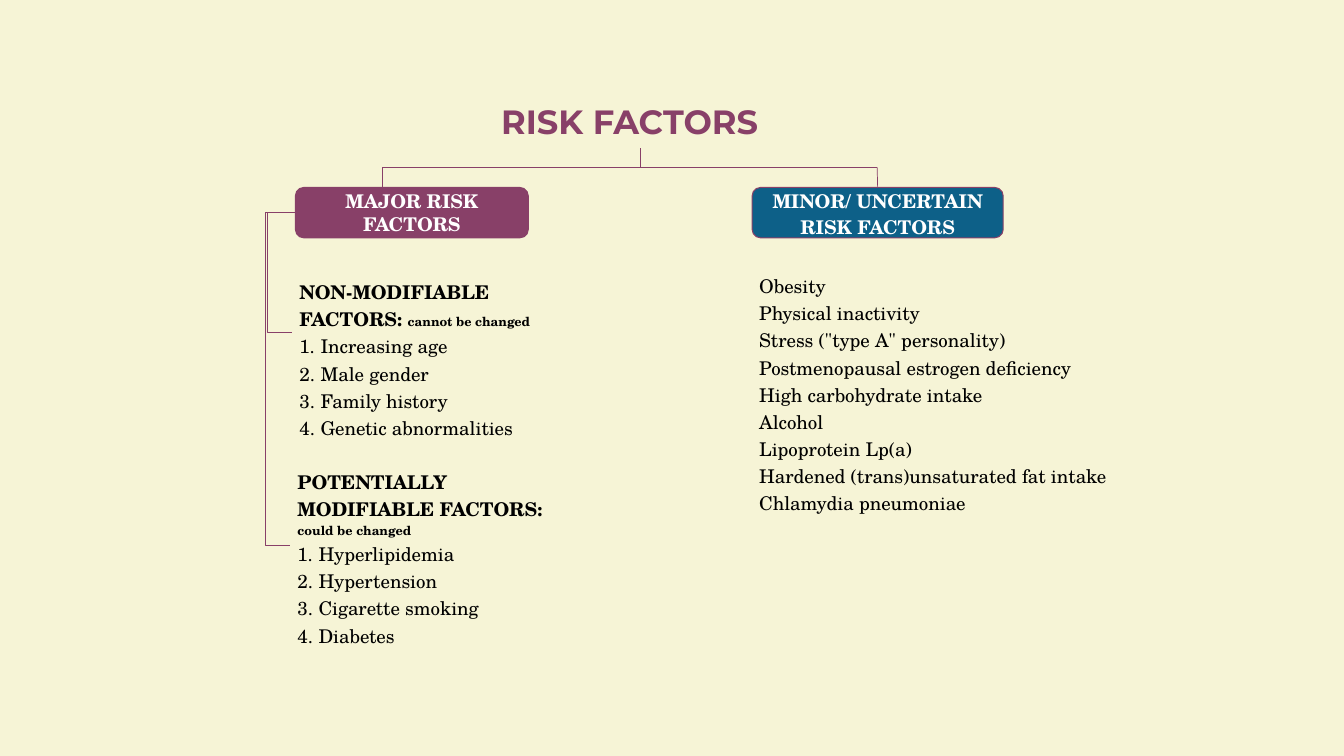
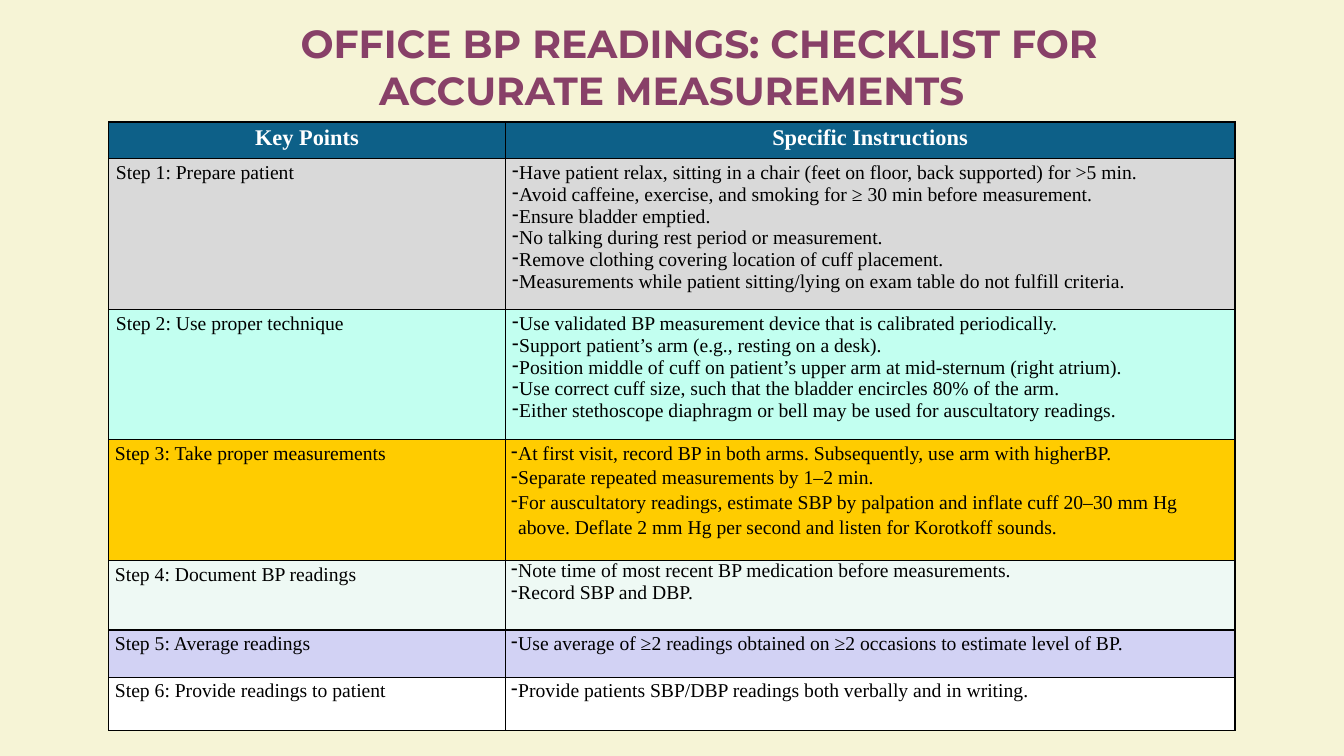
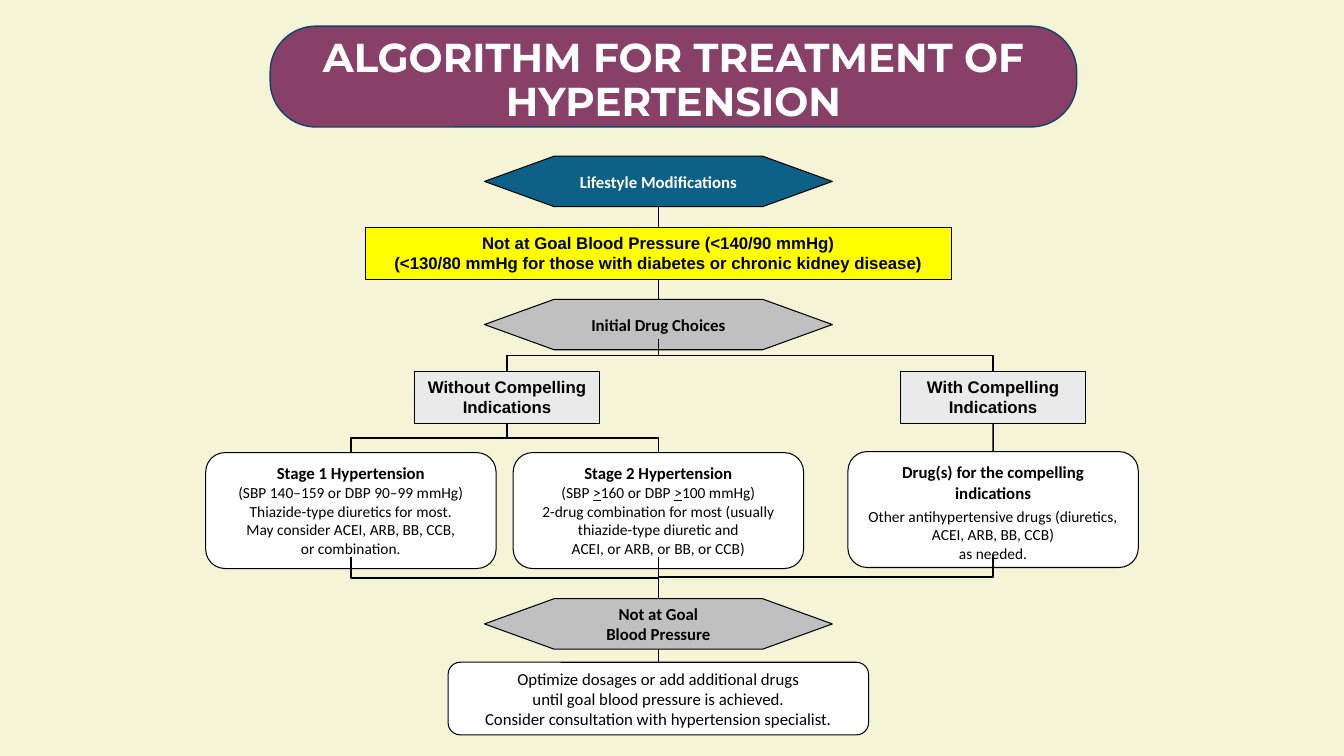
from dataclasses import dataclass, field, replace
from typing import Optional

from lxml import etree
from pptx import Presentation
from pptx.dml import color
from pptx.enum import shapes, text
from pptx.oxml import ns
from pptx.util import Inches, Pt

Insets = tuple[float, float, float, float]
Rect = tuple[float, float, float, float]
MSO = shapes.MSO_SHAPE
CENTER = text.PP_ALIGN.CENTER
LEFT = text.PP_ALIGN.LEFT
TOP = text.MSO_ANCHOR.TOP
MIDDLE = text.MSO_ANCHOR.MIDDLE


@dataclass(frozen=True)
class Style:
    font: str
    size: float
    color: str = "000000"
    bold: bool = False
    underline: bool = False


@dataclass(frozen=True)
class Theme:
    paper: str = "F6F4D6"
    plum: str = "884068"
    blue: str = "0D6088"
    navy: str = "0A4765"
    black: str = "000000"
    white: str = "FFFFFF"
    yellow: str = "FFFF00"
    gray: str = "C0C0C0"
    pale: str = "EAEAEA"
    title: Style = Style("Montserrat", 28, "884068", True)
    schola: Style = Style("TeX Gyre Schola", 13.5)
    table: Style = Style("Times New Roman", 14)
    table_head: Style = Style("Times New Roman", 16, "FFFFFF", True)
    arial: Style = Style("Arial", 12, bold=True)
    node: Style = Style("Calibri", 12, bold=True)
    detail: Style = Style("Calibri", 11)


T = Theme()


@dataclass(frozen=True)
class Run:
    text: str
    style: Style


@dataclass(frozen=True)
class Para:
    runs: list[Run]
    align: int = CENTER
    spacing: Optional[float] = None
    before: float = 0
    indent: float = 0
    margin: float = 0
    bullet: str = ""


@dataclass(frozen=True)
class Node:
    kind: int
    at: Rect
    fill: str
    paras: list[Para] = field(default_factory=list)
    line: str = T.black
    width: float = 0.75
    adj: Optional[float] = None
    anchor: int = TOP
    wrap: bool = True
    ins: Insets = (0.1, 0.05, 0.1, 0.05)


@dataclass(frozen=True)
class Step:
    name: str
    points: list[str]
    fill: str
    height: float
    ins: Insets = (0.06, 0, 0.06, 0)
    spacing: float = 1.15
    point_spacing: float = 1.15


def rgb(value: str) -> color.RGBColor:
    return color.RGBColor.from_string(value)


def para(content: str, style: Style, **options) -> Para:
    return Para([Run(content, style)], **options)


def write(tf, paras: list[Para]) -> None:
    for i, spec in enumerate(paras):
        p = tf.paragraphs[0] if i == 0 else tf.add_paragraph()
        p.alignment = spec.align
        if spec.indent or spec.margin:
            pPr = p._p.get_or_add_pPr()
            pPr.set("marL", str(Inches(spec.margin)))
            pPr.set("indent", str(Inches(spec.indent)))
        if spec.bullet == "number":
            etree.SubElement(pPr, ns.qn("a:buAutoNum"), type="arabicPeriod")
        elif spec.bullet:
            etree.SubElement(pPr, ns.qn("a:buChar"), char=spec.bullet)
        if spec.spacing:
            p.line_spacing = spec.spacing
        if spec.before:
            p.space_before = Pt(spec.before)
        for run in spec.runs:
            for n, part in enumerate(run.text.split("\n")):
                if n:
                    p.add_line_break()
                if part:
                    r = p.add_run()
                    r.text = part
                    r.font.name = run.style.font
                    r.font.size = Pt(run.style.size)
                    r.font.bold = run.style.bold
                    r.font.underline = run.style.underline
                    r.font.color.rgb = rgb(run.style.color)


def frame(tf, ins: Insets, anchor: int = TOP, wrap: bool = True) -> None:
    tf.word_wrap = wrap
    tf.vertical_anchor = anchor
    tf.margin_left, tf.margin_top, tf.margin_right, tf.margin_bottom = map(Inches, ins)


def add_text(s, at: Rect, paras: list[Para], ins: Insets = (0.07, 0.07, 0.07, 0.07)) -> None:
    tf = s.shapes.add_textbox(*map(Inches, at)).text_frame
    frame(tf, ins)
    write(tf, paras)


def add_node(s, node: Node):
    sp = s.shapes.add_shape(node.kind, *map(Inches, node.at))
    sp.shadow.inherit = False
    sp.fill.solid()
    sp.fill.fore_color.rgb = rgb(node.fill)
    sp.line.color.rgb = rgb(node.line)
    sp.line.width = Pt(node.width)
    if node.adj is not None:
        sp.adjustments[0] = node.adj
    frame(sp.text_frame, node.ins, node.anchor, node.wrap)
    write(sp.text_frame, node.paras)
    return sp


def connector(s, kind: int, box: Rect, stroke: str, width: float):
    c = s.shapes.add_connector(kind, *map(Inches, box))
    c.line.color.rgb = rgb(stroke)
    c.line.width = Pt(width)
    etree.SubElement(c.element.spPr, ns.qn("a:effectLst"))
    return c


def line(s, box: Rect, stroke: str = T.black, width: float = 1, start=None, end=None) -> None:
    c = connector(s, shapes.MSO_CONNECTOR.STRAIGHT, box, stroke, width)
    if start is not None:
        c.begin_connect(start, 2)
    if end is not None:
        c.end_connect(end, 0)


def link(s, upper, lower) -> None:
    line(s, (0, 0, 1, 1), start=upper, end=lower)


def elbow_down(s, x1: float, y1: float, x2: float, y2: float) -> None:
    cx, cy = (x1 + x2) / 2, (y1 + y2) / 2
    w, h = y2 - y1, abs(x2 - x1)
    box = (cx - w / 2, cy - h / 2, cx + w / 2, cy + h / 2)
    c = connector(s, shapes.MSO_CONNECTOR.ELBOW, box, T.black, 1)
    xfrm = c.element.spPr.xfrm
    xfrm.set("rot", str((270 if x2 > x1 else 90) * 60000))
    if x2 > x1:
        xfrm.set("flipH", "1")


def bracket(s, x1: float, y1: float, x2: float, y2: float, spine: float) -> None:
    c = connector(s, shapes.MSO_CONNECTOR.ELBOW, (x2, y1, x1, y2), T.plum, 0.75)
    xfrm = c.element.spPr.xfrm
    xfrm.set("rot", str(180 * 60000))
    xfrm.set("flipV", "1")
    guides = c.element.spPr.find(".//" + ns.qn("a:avLst"))
    bend = round((x1 - spine) / (x1 - x2) * 100000)
    etree.SubElement(guides, ns.qn("a:gd"), name="adj1", fmla=f"val {bend}")


def risk_factors(s) -> None:
    body = T.schola
    bold = replace(body, bold=True)
    small = replace(bold, size=9)
    head = replace(bold, color=T.white)
    loose = dict(align=LEFT, spacing=1.2)

    add_text(s, (4.58, 1.03, 3.33, 0.43),
             [para("RISK FACTORS", replace(T.title, size=24), spacing=0.9)],
             (0.04, 0.02, 0.04, 0.02))
    heads = [
        (2.93, 2.31, T.plum, "MAJOR RISK FACTORS", None),
        (7.46, 2.49, T.blue, "MINOR/ UNCERTAIN RISK FACTORS", 1.15),
    ]
    major, minor = [
        add_node(s, Node(MSO.ROUNDED_RECTANGLE, (x, 1.86, w, 0.5), fill,
                         [para(label, head, spacing=spacing)], line=T.plum,
                         adj=0.167, anchor=MIDDLE, ins=(0.07, 0.07, 0.07, 0.07)))
        for x, w, fill, label, spacing in heads
    ]

    groups = [
        ((2.9, 2.67, 2.66, 1.75), "NON-MODIFIABLE FACTORS: ", "cannot be changed",
         ["Increasing age", "Male gender", "Family history", "Genetic abnormalities"]),
        ((2.88, 4.55, 2.67, 1.9), "POTENTIALLY MODIFIABLE FACTORS: ", "could be changed",
         ["Hyperlipidemia", "Hypertension", "Cigarette smoking", "Diabetes"]),
    ]
    for at, name, note, items in groups:
        heading = Para([Run(name, bold), Run(note, small)], **loose)
        add_text(s, at, [heading] + [
            para(item, body, margin=0.21, indent=-0.21, bullet="number", **loose)
            for item in items])

    minor_items = [
        "Obesity", "Physical inactivity", 'Stress ("type A" personality)',
        "Postmenopausal estrogen deficiency", "High carbohydrate intake", "Alcohol",
        "Lipoprotein Lp(a)", "Hardened (trans)unsaturated fat intake",
        "Chlamydia pneumoniae",
    ]
    add_text(s, (7.46, 2.61, 3.62, 2.7), [para(item, body, **loose) for item in minor_items])

    bracket(s, 2.93, 2.11, 2.9, 3.3, 2.65)
    bracket(s, 2.93, 2.11, 2.88, 5.41, 2.63)
    line(s, (3.79, 1.66, 8.7, 1.66), T.plum, 0.75)
    line(s, (8.7, 1.66, 8.7, 1.86), T.plum, 0.5, end=minor)
    line(s, (3.79, 1.66, 3.79, 1.86), T.plum, 0.5)
    line(s, (6.35, 1.47, 6.35, 1.66), T.plum, 0.5)


STEPS = [
    Step("Step 1: Prepare patient", [
        "Have patient relax, sitting in a chair (feet on floor, back supported) for >5 min.",
        "Avoid caffeine, exercise, and smoking for ≥ 30 min before measurement.",
        "Ensure bladder emptied.",
        "No talking during rest period or measurement.",
        "Remove clothing covering location of cuff placement.",
        "Measurements while patient sitting/lying on exam table do not fulfill criteria.",
    ], "D9D9D9", 1.5, (0.07, 0.04, 0.07, 0.04), 1, 1),
    Step("Step 2: Use proper technique", [
        "Use validated BP measurement device that is calibrated periodically.",
        "Support patient’s arm (e.g., resting on a desk).",
        "Position middle of cuff on patient’s upper arm at mid-sternum (right atrium).",
        "Use correct cuff size, such that the bladder encircles 80% of the arm.",
        "Either stethoscope diaphragm or bell may be used for auscultatory readings.",
    ], "C2FFF0", 1.29, (0.07, 0.04, 0.07, 0.04), 1, 1),
    Step("Step 3: Take proper measurements", [
        "At first visit, record BP in both arms. Subsequently, use arm with higherBP.",
        "Separate repeated measurements by 1–2 min.",
        "For auscultatory readings, estimate SBP by palpation and inflate cuff 20–30 mm Hg "
        "above. Deflate 2 mm Hg per second and listen for Korotkoff sounds.",
    ], "FFCC00", 1.2),
    Step("Step 4: Document BP readings", [
        "Note time of most recent BP medication before measurements.",
        "Record SBP and DBP.",
    ], "EEF9F4", 0.69, point_spacing=1),
    Step("Step 5: Average readings", [
        "Use average of ≥2 readings obtained on ≥2 occasions to estimate level of BP.",
    ], "D2D2F4", 0.47),
    Step("Step 6: Provide readings to patient", [
        "Provide patients SBP/DBP readings both verbally and in writing.",
    ], "FFFFFF", 0.53),
]


def fill_cell(cell, paras: list[Para], fill: str, ins: Insets) -> None:
    cell.margin_left, cell.margin_top, cell.margin_right, cell.margin_bottom = map(Inches, ins)
    tcPr = cell._tc.get_or_add_tcPr()
    for side in "LRTB":
        ln = etree.SubElement(tcPr, ns.qn(f"a:ln{side}"), w=str(Pt(1)))
        solid = etree.SubElement(ln, ns.qn("a:solidFill"))
        etree.SubElement(solid, ns.qn("a:srgbClr"), val=T.black)
    cell.fill.solid()
    cell.fill.fore_color.rgb = rgb(fill)
    write(cell.text_frame, paras)


def bp_checklist(s) -> None:
    widths = (3.93, 7.24)
    heights = [0.36] + [step.height for step in STEPS]
    table = s.shapes.add_table(len(heights), len(widths), Inches(1.08), Inches(1.21),
                               Inches(sum(widths)), Inches(sum(heights))).table
    table.first_row = table.horz_banding = False
    for column, w in zip(table.columns, widths):
        column.width = Inches(w)
    for row, h in zip(table.rows, heights):
        row.height = Inches(h)
    for col, label in enumerate(("Key Points", "Specific Instructions")):
        fill_cell(table.cell(0, col), [para(label, T.table_head)], T.blue,
                  (0.07, 0.04, 0.07, 0.04))
    for row, step in enumerate(STEPS, 1):
        name = para(step.name, T.table, align=LEFT, spacing=step.spacing)
        points = [para(point, T.table, align=LEFT, spacing=step.point_spacing,
                       margin=0.07, indent=-0.07, bullet="-") for point in step.points]
        for col, paras in enumerate(([name], points)):
            fill_cell(table.cell(row, col), paras, step.fill, step.ins)
    add_text(s, (1.43, 0.14, 10.46, 1.04),
             [para("OFFICE BP READINGS: CHECKLIST FOR ACCURATE MEASUREMENTS",
                   T.title, indent=0.55)], (0.1, 0.05, 0.1, 0.05))


def treatment_algorithm(s) -> None:
    mid, without_x, stage1_x, with_x = 6.53, 5.03, 3.48, 9.85
    plain = replace(T.node, bold=False)
    under = replace(T.detail, underline=True)

    def around(x: float, y: float, w: float, h: float) -> Rect:
        return x - w / 2, y, w, h

    def hexagon(y: float, fill: str, label: str, ink: str = T.black):
        return add_node(s, Node(MSO.FLOWCHART_PREPARATION, around(mid, y, 3.45, 0.5), fill,
                                [para(label, replace(T.node, color=ink))],
                                anchor=MIDDLE, wrap=False))

    def block(x: float, y: float, w: float, fill: str, label: str):
        return add_node(s, Node(MSO.RECTANGLE, around(x, y, w, 0.51), fill,
                                [para(label, T.arial)]))

    def card(x: float, y: float, paras: list[Para], w: float = 2.88, h: float = 1.15,
             anchor: int = TOP):
        return add_node(s, Node(MSO.FLOWCHART_ALTERNATE_PROCESS, around(x, y, w, h),
                                T.white, paras, anchor=anchor))

    add_node(s, Node(MSO.ROUNDED_RECTANGLE, (2.68, 0.26, 8, 1), T.plum,
                     [para("ALGORITHM FOR TREATMENT OF HYPERTENSION",
                           replace(T.title, size=28.8, color=T.white), spacing=0.9)],
                     line=T.navy, width=1, adj=0.454, anchor=MIDDLE,
                     ins=(0.1, 0.1, 0.1, 0)))

    lifestyle = hexagon(1.55, T.blue, "Lifestyle Modifications", T.white)
    goal = block(mid, 2.26, 5.81, T.yellow,
                 "Not at Goal Blood Pressure (<140/90 mmHg)\n"
                 "(<130/80 mmHg for those with diabetes or chronic kidney disease)")
    choices = hexagon(2.97, T.gray, "Initial Drug Choices")
    block(without_x, 3.69, 1.83, T.pale, "Without Compelling\nIndications")
    compelling = block(with_x, 3.69, 1.83, T.pale, "With Compelling\nIndications")
    card(stage1_x, 4.49, [Para([
        Run("Stage 1 Hypertension\n", T.node),
        Run("(SBP 140–159 or DBP 90–99 mmHg)\nThiazide-type diuretics for most.\n"
            "May consider ACEI, ARB, BB, CCB,\nor combination.", T.detail)])])
    card(mid, 4.49, [Para([
        Run("Stage 2 Hypertension\n", T.node), Run("(SBP ", T.detail), Run(">", under),
        Run("160 or DBP ", T.detail), Run(">", under),
        Run("100 mmHg)\n2-drug combination for most (usually thiazide-type diuretic and\n"
            "ACEI, or ARB, or BB, or CCB)", T.detail)])])
    drugs = card(with_x, 4.48, [
        para("Drug(s) for the compelling indications", T.node),
        para("Other antihypertensive drugs (diuretics, ACEI, ARB, BB, CCB)\nas needed.",
             T.detail, before=3)])
    not_at_goal = hexagon(5.94, T.gray, "Not at Goal\nBlood Pressure")
    optimize = card(mid, 6.57, [para(
        "Optimize dosages or add additional drugs\nuntil goal blood pressure is achieved.\n"
        "Consider consultation with hypertension specialist.", plain)], 4.17, 0.72, MIDDLE)

    for upper, lower in ((lifestyle, goal), (goal, choices), (compelling, drugs),
                         (not_at_goal, optimize)):
        link(s, upper, lower)
    for x1, y1, x2, y2 in (
        (mid, 3.36, without_x, 3.69), (mid, 3.36, with_x, 3.69),
        (without_x, 4.2, stage1_x, 4.49), (without_x, 4.2, mid, 4.49),
        (stage1_x, 5.53, mid, 5.94), (with_x, 5.51, mid, 5.94),
    ):
        elbow_down(s, x1, y1, x2, y2)
    line(s, (mid, 5.53, mid, 5.94), end=not_at_goal)


def main() -> None:
    prs = Presentation()
    prs.slide_width, prs.slide_height = Inches(13.33), Inches(7.5)
    background = prs.slide_master.background.fill
    background.solid()
    background.fore_color.rgb = rgb(T.paper)
    for build in (risk_factors, bp_checklist, treatment_algorithm):
        build(prs.slides.add_slide(prs.slide_layouts[6]))
    prs.save("out.pptx")


if __name__ == "__main__":
    main()
